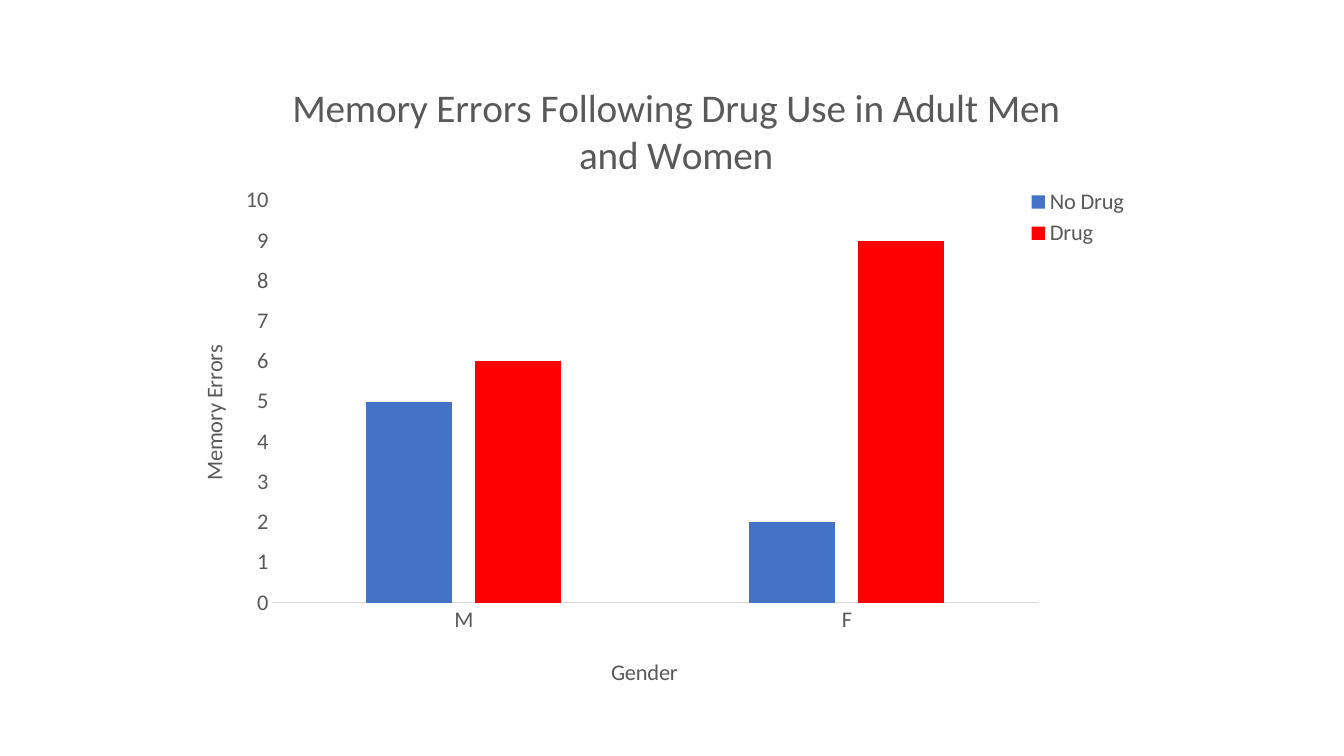
import pptx
import pptx.chart.data
import pptx.dml.color
import pptx.enum.chart
import pptx.oxml
import pptx.oxml.ns
import pptx.util
from pptx.util import Inches

COLORS = {"text": "595959", "axis": "D9D9D9", "No Drug": "4472C4", "Drug": "FF0000"}
FONT = "Calibri"
ERRORS = {"No Drug": (5, 2), "Drug": (6, 9)}
CHART_BOX = (1.69, 0.51, 9.96, 6.48)


def color(name):
    return pptx.dml.color.RGBColor.from_string(COLORS[name])


def style_font(font, size=16, bold=False):
    font.name = FONT
    font.size = pptx.util.Pt(size)
    font.bold = bold
    font.color.rgb = color("text")


def write_text(frame, text, **style):
    frame.text = text
    style_font(frame.paragraphs[0].runs[0].font, **style)


def place(part, after, box, x, y, w=None, h=None, inner=False):
    """Fix a chart part at an offset in inches from the corner of the chart box."""
    qn = pptx.oxml.ns.qn
    for old in part.findall(qn("c:layout")):
        part.remove(old)
    settings = [("layoutTarget", "inner")] if inner else []
    settings += [("xMode", "edge"), ("yMode", "edge")]
    lengths = {"x": (x, box[2]), "y": (y, box[3]), "w": (w, box[2]), "h": (h, box[3])}
    settings += [(key, length / whole) for key, (length, whole) in lengths.items()
                 if length is not None]
    inside = "".join(f'<c:{key} val="{value}"/>' for key, value in settings)
    layout = pptx.oxml.parse_xml(
        f'<c:layout {pptx.oxml.ns.nsdecls("c")}><c:manualLayout>{inside}'
        "</c:manualLayout></c:layout>")
    if after:
        part.find(qn(after)).addnext(layout)
    else:
        part.insert(0, layout)


def format_axis(axis, title, box, x, y):
    axis.has_major_gridlines = False
    axis.major_tick_mark = axis.minor_tick_mark = pptx.enum.chart.XL_TICK_MARK.NONE
    style_font(axis.tick_labels.font)
    write_text(axis.axis_title.text_frame, title)
    place(axis.axis_title._element, "c:tx", box, x, y)


def add_legend(chart, box):
    chart.has_legend = True
    legend = chart.legend
    legend.position = pptx.enum.chart.XL_LEGEND_POSITION.RIGHT
    legend.include_in_layout = False
    style_font(legend.font)
    place(legend._element, "c:legendPos", box, 8.45, 1.32, 1.1, 0.66)


def add_error_chart(slide, box):
    data = pptx.chart.data.CategoryChartData()
    data.categories = ["M", "F"]
    for name, values in ERRORS.items():
        data.add_series(name, values)
    chart = slide.shapes.add_chart(
        pptx.enum.chart.XL_CHART_TYPE.COLUMN_CLUSTERED, *map(Inches, box), data).chart
    style_font(chart.font)

    write_text(chart.chart_title.text_frame,
               "Memory Errors Following Drug Use in Adult Men and Women", size=28)
    chart.chart_title.include_in_layout = False
    place(chart.chart_title._element, "c:tx", box, 1.14, 0.22)

    bars = chart.plots[0]
    bars.gap_width, bars.overlap = 219, -27
    bars.vary_by_categories = False
    for series in bars.series:
        series.format.fill.solid()
        series.format.fill.fore_color.rgb = color(series.name)

    gender, errors = chart.category_axis, chart.value_axis
    format_axis(gender, "Gender", box, 4.33, 5.97)
    gender.format.line.color.rgb = color("axis")
    gender.format.line.width = pptx.util.Pt(0.75)
    format_axis(errors, "Memory Errors", box, 0.24, 2.87)
    errors.format.line.fill.background()
    errors.minimum_scale, errors.maximum_scale, errors.major_unit = 0, 10, 1

    add_legend(chart, box)
    place(chart._chartSpace.chart.plotArea, None, box, 1.01, 1.48, 7.6, 3.99, inner=True)


def main():
    deck = pptx.Presentation()
    deck.slide_width, deck.slide_height = Inches(13.33), Inches(7.5)
    slide = deck.slides.add_slide(deck.slide_layouts[6])
    add_error_chart(slide, CHART_BOX)
    deck.save("out.pptx")


if __name__ == "__main__":
    main()
